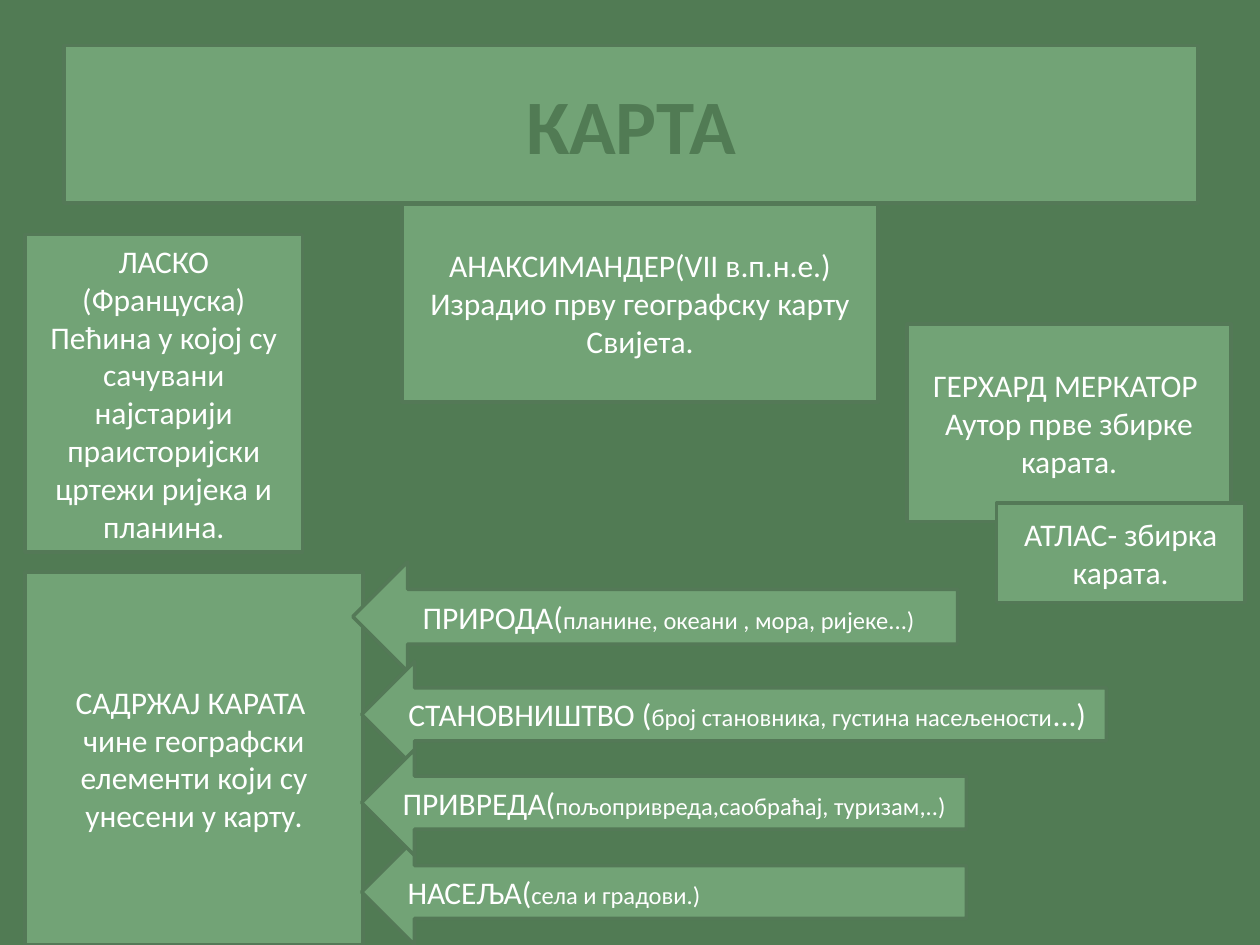
from pptx import Presentation
from pptx.dml.color import RGBColor
from pptx.enum.shapes import MSO_SHAPE
from pptx.enum.text import MSO_ANCHOR, PP_ALIGN
from pptx.util import Inches, Pt

DARK = RGBColor(0x51, 0x7B, 0x54)
GREEN = RGBColor(0x72, 0xA3, 0x76)
EDGE = RGBColor(0x54, 0x79, 0x57)
WHITE = RGBColor(0xFF, 0xFF, 0xFF)

BODY = {"name": "Calibri", "size": Pt(18)}
SMALL = {"name": "Calibri", "size": Pt(14)}
TITLE = {"name": "Calibri", "size": Pt(44), "bold": True}

PROCESS = MSO_SHAPE.FLOWCHART_PROCESS
RECT = MSO_SHAPE.RECTANGLE

CARDS = [
    (PROCESS, (0.2, 1.86, 2.2, 2.52),
     ["ЛАСКО (Француска)",
      "Пећина у којој су сачувани најстарији праисторијски цртежи ријека и планина."]),
    (PROCESS, (3.19, 1.62, 3.78, 1.57),
     ["АНАКСИМАНДЕР(VII в.п.н.е.)", "Израдио прву географску карту Свијета."]),
    (PROCESS, (7.2, 2.57, 2.57, 1.57),
     ["ГЕРХАРД МЕРКАТОР ", "Аутор прве збирке карата."]),
    (RECT, (7.91, 3.99, 1.97, 0.79), ["АТЛАС- збирка карата."]),
    (RECT, (0.2, 4.54, 2.68, 2.96),
     ["САДРЖАЈ КАРАТА ", "чине географски елементи који су унесени у карту."]),
]

# Place, alignment, then large and small text in turn
ARROWS = [
    ((2.8, 4.46, 4.8, 0.87), PP_ALIGN.CENTER,
     ["ПРИРОДА(", "планине, океани , мора, ријеке...)"]),
    ((2.87, 5.25, 5.91, 0.84), PP_ALIGN.CENTER,
     ["СТАНОВНИШТВО (", "број становника, густина насељености", "...)"]),
    ((2.87, 6.66, 4.8, 0.84), PP_ALIGN.LEFT,
     [" НАСЕЉА(", "села и градови.)"]),
    ((2.87, 5.95, 4.8, 0.84), PP_ALIGN.CENTER,
     ["ПРИВРЕДА(", "пољопривреда,саобраћај, туризам,..) "]),
]


def add_block(slide, kind, place, paras, align=PP_ALIGN.CENTER, color=WHITE):
    """Add a filled shape; each paragraph is a list of (text, format) runs."""
    shape = slide.shapes.add_shape(kind, *map(Inches, place))
    shape.shadow.inherit = False
    shape.fill.solid()
    shape.fill.fore_color.rgb = GREEN
    shape.line.color.rgb = EDGE
    shape.line.width = Pt(2)
    frame = shape.text_frame
    frame.word_wrap = True
    frame.vertical_anchor = MSO_ANCHOR.MIDDLE
    for i, runs in enumerate(paras):
        para = frame.add_paragraph() if i else frame.paragraphs[0]
        para.alignment = align
        for text, style in runs:
            run = para.add_run()
            run.text = text
            for key, value in style.items():
                setattr(run.font, key, value)
            run.font.color.rgb = color


def add_card(slide, kind, place, lines):
    add_block(slide, kind, place, [[(line, BODY)] for line in lines])


def add_arrow(slide, place, align, parts):
    runs = [(part, SMALL if i % 2 else BODY) for i, part in enumerate(parts)]
    add_block(slide, MSO_SHAPE.LEFT_ARROW, place, [runs], align)


def main():
    deck = Presentation()
    deck.slide_width, deck.slide_height = Inches(10), Inches(7.5)
    slide = deck.slides.add_slide(deck.slide_layouts[6])
    slide.background.fill.solid()
    slide.background.fill.fore_color.rgb = DARK
    add_block(slide, RECT, (0.51, 0.36, 9, 1.25), [[("КАРТА", TITLE)]], color=DARK)
    for card in CARDS:
        add_card(slide, *card)
    for arrow in ARROWS:
        add_arrow(slide, *arrow)
    deck.save("out.pptx")


if __name__ == "__main__":
    main()
